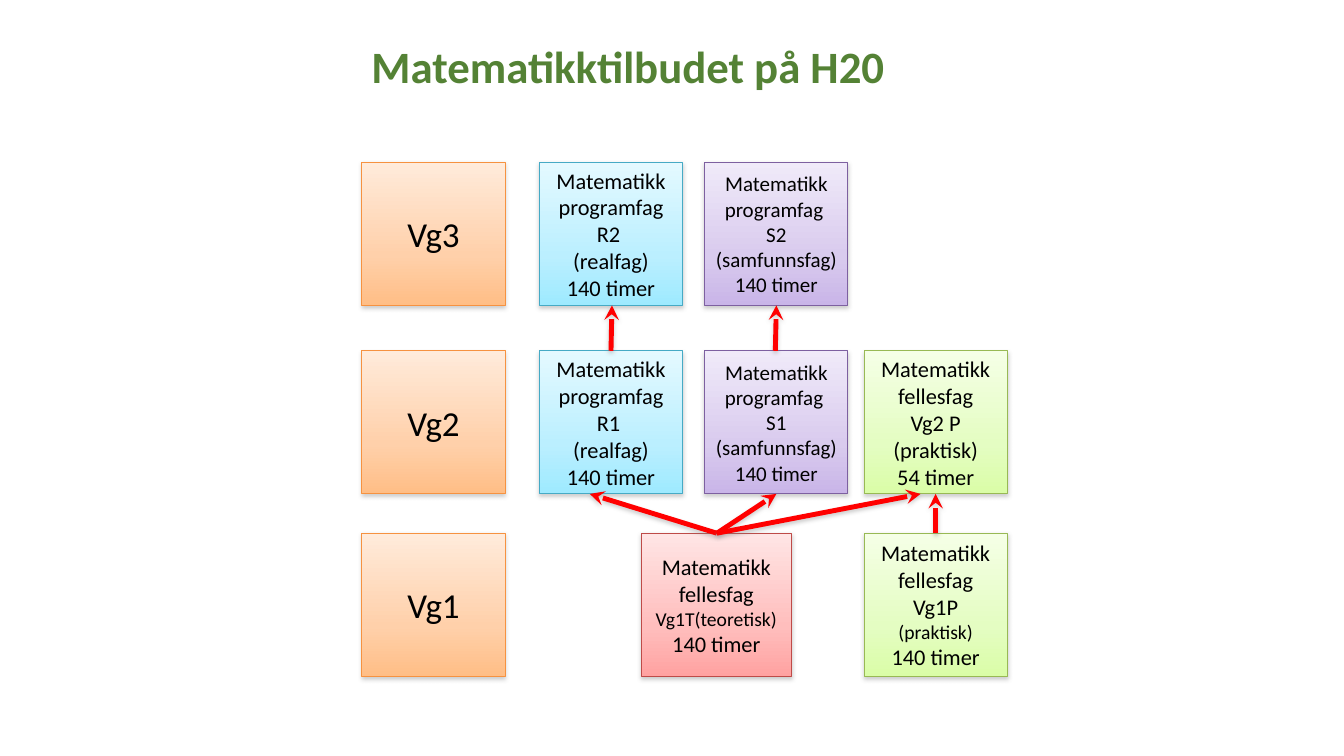
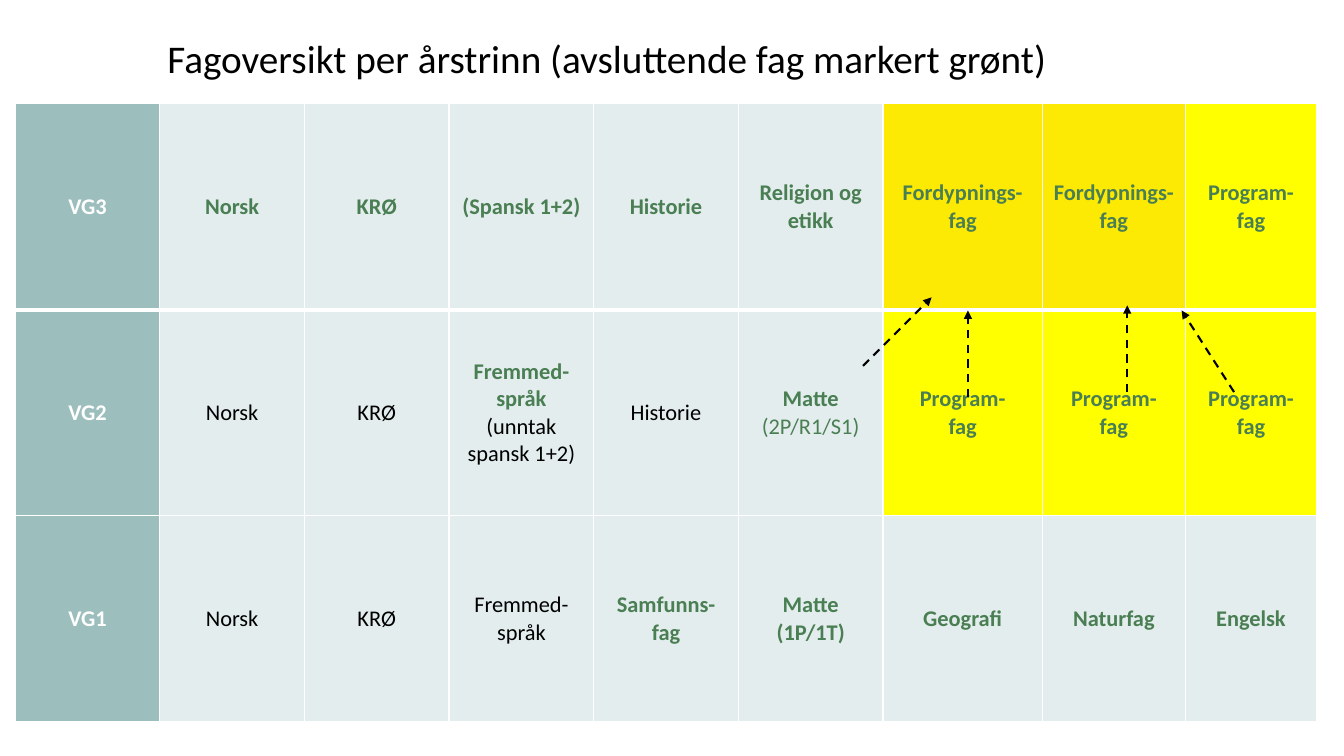
"""Builds two slides on the mathematics courses and the subjects of each school year."""
import copy
from dataclasses import dataclass
from typing import NamedTuple

import lxml.etree
import pptx
import pptx.dml.color
import pptx.enum.dml
import pptx.enum.shapes
import pptx.enum.text
import pptx.oxml.ns
import pptx.util

Inches = pptx.util.Inches
Pt = pptx.util.Pt
qn = pptx.oxml.ns.qn
ALIGN = pptx.enum.text.PP_ALIGN
ANCHOR = pptx.enum.text.MSO_ANCHOR

FONT = "Calibri"
COLOURS = {
    "black": "000000", "white": "FFFFFF", "title": "548235", "arrow": "FF0000",
    "shadow": "808080", "finished": "4A7E53", "year": "9CBEBD",
    "common": "E3EDED", "programme": "FFFF00", "advanced": "FCEA04",
}


class Palette(NamedTuple):
    top: str
    middle: str
    bottom: str
    outline: str


PALETTES = {
    "year": Palette("FFEBDB", "FFD0AA", "FFBE86", "F69240"),
    "science": Palette("E4F9FF", "BBEFFF", "9EEAFF", "46AAC5"),
    "social": Palette("F0EAF9", "D9CBEE", "C9B5E8", "7D60A0"),
    "practical": Palette("F5FFE6", "E4FDC2", "DAFDA7", "98B954"),
    "theoretical": Palette("FFE5E5", "FFBEBD", "FFA2A1", "BE4B48"),
}


class Words(NamedTuple):
    text: str
    size: float = 16
    colour: str = "black"
    bold: bool = False


@dataclass(frozen=True)
class Course:
    left: float
    top: float
    palette: str
    paragraphs: list[list[Words]]
    width: float = 1.42


@dataclass(frozen=True)
class Arrow:
    start: tuple[float, float]
    end: tuple[float, float]


@dataclass(frozen=True)
class ArrowStyle:
    colour: str
    width: float
    head: str
    dashed: bool = False
    shadow: bool = False


class Subject(NamedTuple):
    fill: str
    words: list[Words]


BOX_HEIGHT = 1.42
VG3, VG2, VG1 = 1.61, 3.48, 5.29
YEAR_LEFT, SCIENCE_LEFT, SOCIAL_LEFT, PRACTICAL_LEFT = 3.59, 5.35, 6.99, 8.57
COURSE_ARROW = ArrowStyle("arrow", 3.5, "stealth", shadow=True)
SUBJECT_ARROW = ArrowStyle("black", 1.5, "triangle", dashed=True)


def rgb(value: str) -> pptx.dml.color.RGBColor:
    return pptx.dml.color.RGBColor.from_string(value)


def add_words(paragraph, words: list[Words], align=ALIGN.CENTER) -> None:
    paragraph.alignment = align
    for part in words:
        for index, line in enumerate(part.text.split("\n")):
            if index:
                paragraph.add_line_break()
            run = paragraph.add_run()
            run.text = line
            run.font.name = FONT
            run.font.size = Pt(part.size)
            run.font.bold = part.bold
            run.font.color.rgb = rgb(COLOURS[part.colour])


def add_titled_slide(deck, box: tuple[float, ...], words: Words, align, anchor):
    slide = deck.slides.add_slide(deck.slide_layouts[5])
    title = slide.shapes.title
    title.left, title.top, title.width, title.height = map(Inches, box)
    frame = title.text_frame
    frame.word_wrap = True
    frame.auto_size = pptx.enum.text.MSO_AUTO_SIZE.NONE
    frame.vertical_anchor = anchor
    frame.paragraphs[0].line_spacing = 0.9
    add_words(frame.paragraphs[0], [words], align)
    return slide


def add_shadow(effects) -> None:
    shadow = lxml.etree.SubElement(
        effects, qn("a:outerShdw"), blurRad=str(Pt(3.1)), dist=str(Pt(1.6)),
        dir="5400000", rotWithShape="0")
    colour = lxml.etree.SubElement(shadow, qn("a:srgbClr"), val=COLOURS["shadow"])
    lxml.etree.SubElement(colour, qn("a:alpha"), val="38000")


def add_course(slide, course: Course) -> None:
    box = slide.shapes.add_shape(
        pptx.enum.shapes.MSO_SHAPE.RECTANGLE, Inches(course.left), Inches(course.top),
        Inches(course.width), Inches(BOX_HEIGHT))
    palette = PALETTES[course.palette]
    box.fill.gradient()
    box.fill.gradient_angle = 270
    stops = box._element.spPr.find(".//" + qn("a:gsLst"))
    stops.append(copy.deepcopy(stops[0]))
    for stop, position, colour in zip(box.fill.gradient_stops, (0, 0.65, 1), palette):
        stop.position = position
        stop.color.rgb = rgb(colour)
    box.line.color.rgb = rgb(palette.outline)
    box.line.width = Pt(0.75)
    box.shadow.inherit = False
    add_shadow(box._element.spPr.find(qn("a:effectLst")))
    frame = box.text_frame
    frame.word_wrap = True
    frame.vertical_anchor = ANCHOR.MIDDLE
    for index, words in enumerate(course.paragraphs):
        add_words(frame.add_paragraph() if index else frame.paragraphs[0], words)


def add_arrow(slide, arrow: Arrow, style: ArrowStyle) -> None:
    connector = slide.shapes.add_connector(
        pptx.enum.shapes.MSO_CONNECTOR.STRAIGHT,
        *map(Inches, arrow.start + arrow.end))
    connector.line.color.rgb = rgb(COLOURS[style.colour])
    connector.line.width = Pt(style.width)
    if style.dashed:
        connector.line.dash_style = pptx.enum.dml.MSO_LINE.DASH
    properties = connector._element.spPr
    lxml.etree.SubElement(properties.find(qn("a:ln")), qn("a:tailEnd"), type=style.head)
    effects = lxml.etree.SubElement(properties, qn("a:effectLst"))
    if style.shadow:
        add_shadow(effects)


def add_borders(cell, top: float, bottom: float) -> None:
    properties = cell._tc.get_or_add_tcPr()
    for side, width in (("L", 1), ("R", 1), ("T", top), ("B", bottom)):
        border = lxml.etree.SubElement(properties, qn(f"a:ln{side}"), w=str(Pt(width)))
        fill = lxml.etree.SubElement(border, qn("a:solidFill"))
        lxml.etree.SubElement(fill, qn("a:srgbClr"), val=COLOURS["white"])


def add_subject_table(slide, years: list[list[Subject]]) -> None:
    width, height = 12.91, 6.13
    last_widths = [1.58, 1.42, 1.3]
    common_count = len(years[0]) - len(last_widths)
    widths = [(width - sum(last_widths)) / common_count] * common_count + last_widths
    table = slide.shapes.add_table(
        len(years), len(widths), Inches(0.15), Inches(1.03),
        Inches(width), Inches(height)).table
    table.first_row = table.horz_banding = False
    for column, column_width in zip(table.columns, widths):
        column.width = Inches(column_width)
    for row, subjects in enumerate(years):
        table.rows[row].height = Inches(height / len(years))
        for column, subject in enumerate(subjects):
            cell = table.cell(row, column)
            add_borders(cell, top=3 if row == 1 else 1, bottom=3 if row == 0 else 1)
            cell.fill.solid()
            cell.fill.fore_color.rgb = rgb(COLOURS[subject.fill])
            cell.vertical_anchor = ANCHOR.MIDDLE
            add_words(cell.text_frame.paragraphs[0], subject.words)


def year(text: str) -> Subject:
    return Subject("year", [Words(text, colour="white", bold=True)])


def ongoing(text: str) -> Subject:
    return Subject("common", [Words(text)])


def finished(text: str, fill: str = "common") -> Subject:
    return Subject(fill, [Words(text, colour="finished", bold=True)])


def lines(*texts: str, size: float = 16) -> list[list[Words]]:
    return [[Words(text, size)] for text in texts]


def science(name: str, top: float) -> Course:
    return Course(SCIENCE_LEFT, top, "science", lines(
        "Matematikk programfag", f"{name} ", "(realfag)", "140 timer"))


def social(name: str, top: float) -> Course:
    return Course(SOCIAL_LEFT, top, "social", lines(
        "Matematikk programfag ", f"{name} (samfunnsfag)", "140 timer", size=15))


def build_courses(deck) -> None:
    slide = add_titled_slide(
        deck, (2.17, 0.3, 8.12, 0.76),
        Words("Matematikktilbudet på H20", 32, "title", True),
        ALIGN.CENTER, ANCHOR.MIDDLE)
    courses = [
        Course(YEAR_LEFT, top, "year", lines(name, size=25))
        for name, top in (("Vg3", VG3), ("Vg2", VG2), ("Vg1", VG1))
    ] + [
        science("R2", VG3), science("R1", VG2),
        social("S2", VG3), social("S1", VG2),
        Course(PRACTICAL_LEFT, VG2, "practical", lines(
            "Matematikk fellesfag", "Vg2 P (praktisk)", "54 timer")),
        Course(PRACTICAL_LEFT, VG1, "practical", [
            [Words("Matematikk fellesfag")],
            [Words("Vg1P "), Words("(praktisk)", 14)],
            [Words("140 timer")]]),
        Course(6.36, VG1, "theoretical", [
            [Words("Matematikk fellesfag")],
            [Words("Vg1T(teoretisk)", 14)],
            [Words("140 timer")]], width=1.49),
    ]
    for course in courses:
        add_course(slide, course)
    vg3_bottom, vg2_bottom = VG3 + BOX_HEIGHT, VG2 + BOX_HEIGHT
    arrows = [
        Arrow((6.06, VG2), (6.07, vg3_bottom)),
        Arrow((7.69, VG2), (7.7, vg3_bottom)),
        Arrow((9.28, VG1), (9.28, vg2_bottom)),
    ] + [Arrow((7.11, VG1), (target, vg2_bottom)) for target in (5.85, 7.7, 9.13)]
    for arrow in arrows:
        add_arrow(slide, arrow, COURSE_ARROW)


def build_subjects(deck) -> None:
    slide = add_titled_slide(
        deck, (1.56, 0.34, 11.5, 0.65),
        Words("Fagoversikt per årstrinn (avsluttende fag markert grønt)", 28),
        ALIGN.LEFT, ANCHOR.TOP)
    programme = finished("Program-\nfag", "programme")
    advanced = finished("Fordypnings-\nfag", "advanced")
    add_subject_table(slide, [
        [year("VG3"), finished("Norsk"), finished("KRØ"), finished("(Spansk 1+2)"),
         finished("Historie"), finished("Religion og etikk"),
         advanced, advanced, programme],
        [year("VG2"), ongoing("Norsk"), ongoing("KRØ"),
         Subject("common", [Words("Fremmed-språk ", colour="finished", bold=True),
                            Words("(unntak spansk 1+2)")]),
         ongoing("Historie"),
         Subject("common", [Words("Matte\n", colour="finished", bold=True),
                            Words("(2P/R1/S1)", colour="finished")]),
         programme, programme, programme],
        [year("VG1"), ongoing("Norsk"), ongoing("KRØ"), ongoing("Fremmed-språk"),
         finished("Samfunns-fag"), finished("Matte\n(1P/1T)"),
         finished("Geografi"), finished("Naturfag"), finished("Engelsk")],
    ])
    for arrow in (
        Arrow((8.56, 3.63), (9.24, 2.95)),
        Arrow((9.6, 3.94), (9.6, 3.08)),
        Arrow((11.18, 3.89), (11.18, 3.03)),
        Arrow((12.24, 3.89), (11.72, 3.08)),
    ):
        add_arrow(slide, arrow, SUBJECT_ARROW)


def main() -> None:
    deck = pptx.Presentation()
    deck.slide_width, deck.slide_height = Inches(13.33), Inches(7.5)
    build_courses(deck)
    build_subjects(deck)
    deck.save("out.pptx")


if __name__ == "__main__":
    main()
